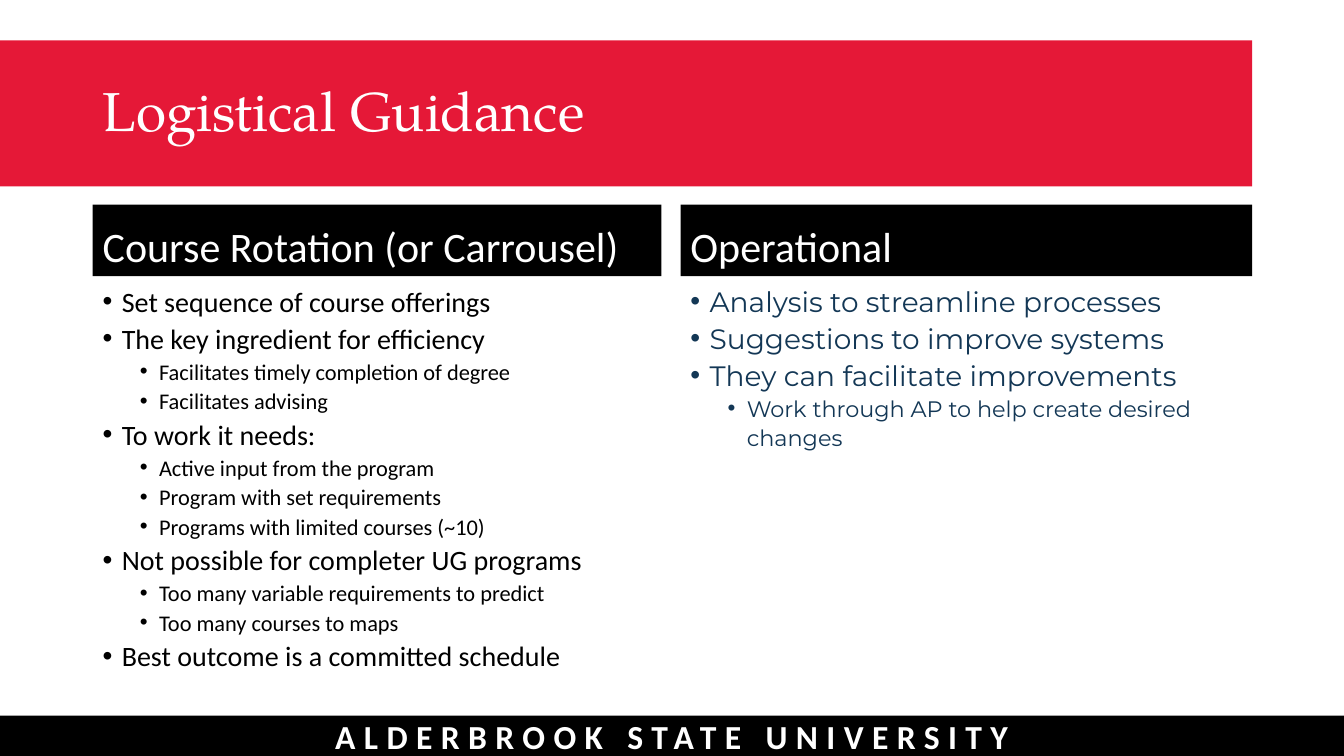
"""Build the Logistical Guidance slide."""
from lxml import etree
from pptx import Presentation
from pptx.dml.color import RGBColor
from pptx.enum.shapes import MSO_SHAPE
from pptx.enum.text import MSO_ANCHOR, PP_ALIGN
from pptx.oxml.ns import qn
from pptx.util import Inches, Pt

TITLE = "Logistical Guidance"
FOOTER = "ALDERBROOK STATE UNIVERSITY"
COURSE = [
    (0, "Set sequence of course offerings"),
    (0, "The key ingredient for efficiency"),
    (1, "Facilitates timely completion of degree"),
    (1, "Facilitates advising"),
    (0, "To work it needs:"),
    (1, "Active input from the program"),
    (1, "Program with set requirements"),
    (1, "Programs with limited courses (~10)"),
    (0, "Not possible for completer UG programs"),
    (1, "Too many variable requirements to predict"),
    (1, "Too many courses to maps"),
    (0, "Best outcome is a committed schedule"),
]
OPERATE = [
    (0, "Analysis to streamline processes"),
    (0, "Suggestions to improve systems"),
    (0, "They can facilitate improvements"),
    (1, "Work through AP to help create desired changes"),
]
THEME = {
    "red": "E51837", "black": "000000", "white": "FFFFFF", "navy": "133755",
    "serif": "TeX Gyre Pagella", "sans": "Calibri", "wide": "Montserrat",
    "title": 39.2, "head": 30, "foot": 24, "levels": (20, 16),
}
WIDTH, HEIGHT = 13.33, 7.5
LEFT, RIGHT, GAP = 0.92, 12.42, 0.19
BAND_TOP, BAND_H = 0.4, 1.45
HEAD_TOP, HEAD_H, BODY_H = 2.03, 0.71, 4.03
FOOT_H = 0.4
INDENTS, HANG = (0.19, 0.56), 0.19
SPLIT = 6.75
COLUMNS = [
    (LEFT, SPLIT - GAP, "Course Rotation (or Carrousel)", COURSE, "sans", "black"),
    (SPLIT, RIGHT, "Operational", OPERATE, "wide", "navy"),
]


def color(name):
    return RGBColor.from_string(THEME[name])


def add_bar(slide, box, fill):
    bar = slide.shapes.add_shape(MSO_SHAPE.RECTANGLE, *map(Inches, box))
    bar.shadow.inherit = False
    bar.fill.solid()
    bar.fill.fore_color.rgb = color(fill)
    bar.line.fill.background()
    return bar


def add_box(slide, box):
    return slide.shapes.add_textbox(*map(Inches, box))


def style(para, size, face, ink, bold=False):
    for run in para.runs:
        font = run.font
        font.size, font.name, font.bold = Pt(size), THEME[face], bold
        font.color.rgb = color(ink)


def set_line(shape, text, size, face, anchor, align=PP_ALIGN.LEFT, bold=False):
    frame = shape.text_frame
    frame.word_wrap = True
    frame.vertical_anchor = anchor
    frame.text = text
    para = frame.paragraphs[0]
    para.alignment = align
    para.line_spacing = 0.9
    style(para, THEME[size], face, "white", bold)
    return para


def add_bullet(para, level):
    props = para._p.get_or_add_pPr()
    props.set("marL", str(Inches(INDENTS[level])))
    props.set("indent", str(-Inches(HANG)))
    font = etree.SubElement(props, qn("a:buFont"))
    font.set("typeface", "Arial")
    mark = etree.SubElement(props, qn("a:buChar"))
    mark.set("char", "•")


def add_list(slide, box, items, face, ink):
    frame = add_box(slide, box).text_frame
    frame.word_wrap = True
    frame.text = "\n".join(text for level, text in items)
    for para, (level, text) in zip(frame.paragraphs, items):
        para.level = level
        para.line_spacing = 1.1
        add_bullet(para, level)
        style(para, THEME["levels"][level], face, ink)


def main():
    deck = Presentation()
    deck.slide_width, deck.slide_height = Inches(WIDTH), Inches(HEIGHT)
    slide = deck.slides.add_slide(deck.slide_layouts[6])

    add_bar(slide, (0, BAND_TOP, RIGHT, BAND_H), "red")
    foot = add_bar(slide, (0, HEIGHT - FOOT_H, WIDTH, FOOT_H), "black")
    para = set_line(foot, FOOTER, "foot", "sans", MSO_ANCHOR.MIDDLE,
                    PP_ALIGN.CENTER, True)
    para.line_spacing = 1.0
    para.runs[0].font._element.set("spc", "600")
    title = add_box(slide, (LEFT, BAND_TOP, RIGHT - LEFT, BAND_H))
    set_line(title, TITLE, "title", "serif", MSO_ANCHOR.MIDDLE)

    for left, right, head, items, face, ink in COLUMNS:
        width = right - left
        bar = add_bar(slide, (left, HEAD_TOP, width, HEAD_H), "black")
        para = set_line(bar, head, "head", "sans", MSO_ANCHOR.BOTTOM)
        para.space_before = Pt(7.5)
        body = (left, HEAD_TOP + HEAD_H, width, BODY_H)
        add_list(slide, body, items, face, ink)

    deck.save("out.pptx")


if __name__ == "__main__":
    main()
